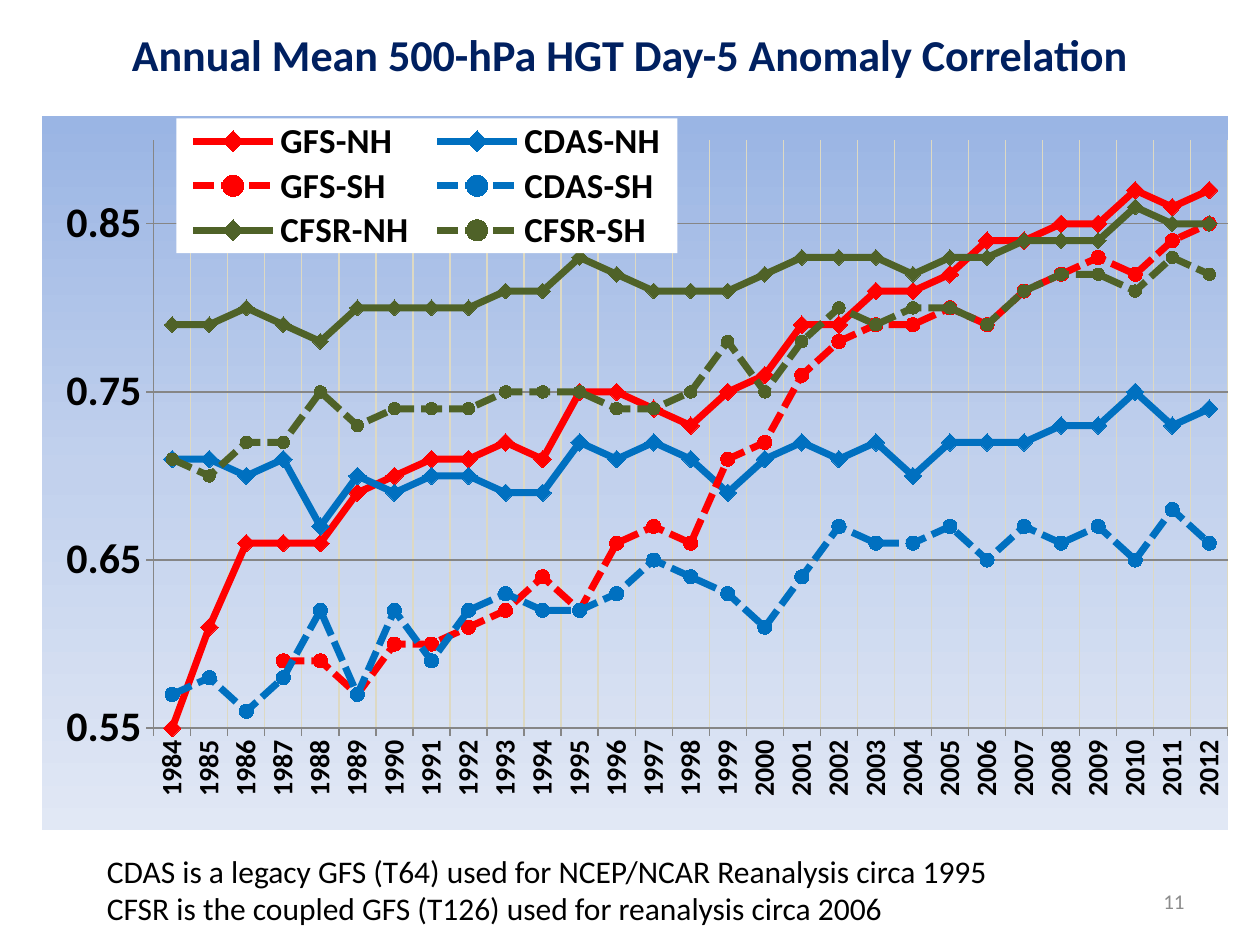
import pptx
import pptx.chart.data
import pptx.dml.color
import pptx.enum.chart
import pptx.enum.dml
import pptx.enum.text
import pptx.oxml
import pptx.oxml.ns
import pptx.util

Inches = pptx.util.Inches
Pt = pptx.util.Pt
qn = pptx.oxml.ns.qn
NAMESPACES = pptx.oxml.ns.nsdecls("c", "a")
ALIGN = pptx.enum.text.PP_ALIGN
ANCHOR = pptx.enum.text.MSO_ANCHOR
FONT = "Calibri"
COLORS = {
    "title": "002060", "text": "000000", "number": "8C8C8C", "white": "FFFFFF",
    "gfs": "FF0000", "cdas": "0070C0", "cfsr": "4F6228",
    "gfs_marker": "FFC000", "cdas_marker": "FAC090",
    "year_grid": "DDD9C3", "axis": "868686",
    "sky_top": "9AB5E4", "sky_middle": "C2D1ED", "sky_bottom": "E1E8F5",
}
YEARS = [str(year) for year in range(1984, 2013)]

# Name, colour, marker colour, marker size, correlations by year
SERIES = [
    ("GFS-NH", "gfs", "gfs_marker", 10,
     [0.55, 0.61, 0.66, 0.66, 0.66, 0.69, 0.7, 0.71, 0.71, 0.72, 0.71, 0.75, 0.75, 0.74, 0.73,
      0.75, 0.76, 0.79, 0.79, 0.81, 0.81, 0.82, 0.84, 0.84, 0.85, 0.85, 0.87, 0.86, 0.87]),
    ("CDAS-NH", "cdas", "cdas_marker", 10,
     [0.71, 0.71, 0.7, 0.71, 0.67, 0.7, 0.69, 0.7, 0.7, 0.69, 0.69, 0.72, 0.71, 0.72, 0.71,
      0.69, 0.71, 0.72, 0.71, 0.72, 0.7, 0.72, 0.72, 0.72, 0.73, 0.73, 0.75, 0.73, 0.74]),
    ("GFS-SH", "gfs", "gfs_marker", 8,
     [None, None, None, 0.59, 0.59, 0.57, 0.6, 0.6, 0.61, 0.62, 0.64, 0.62, 0.66, 0.67, 0.66,
      0.71, 0.72, 0.76, 0.78, 0.79, 0.79, 0.8, 0.79, 0.81, 0.82, 0.83, 0.82, 0.84, 0.85]),
    ("CDAS-SH", "cdas", "cdas_marker", 8,
     [0.57, 0.58, 0.56, 0.58, 0.62, 0.57, 0.62, 0.59, 0.62, 0.63, 0.62, 0.62, 0.63, 0.65, 0.64,
      0.63, 0.61, 0.64, 0.67, 0.66, 0.66, 0.67, 0.65, 0.67, 0.66, 0.67, 0.65, 0.68, 0.66]),
    ("CFSR-NH", "cfsr", "cfsr", 9,
     [0.79, 0.79, 0.8, 0.79, 0.78, 0.8, 0.8, 0.8, 0.8, 0.81, 0.81, 0.83, 0.82, 0.81, 0.81,
      0.81, 0.82, 0.83, 0.83, 0.83, 0.82, 0.83, 0.83, 0.84, 0.84, 0.84, 0.86, 0.85, 0.85]),
    ("CFSR-SH", "cfsr", "cfsr", 7,
     [0.71, 0.7, 0.72, 0.72, 0.75, 0.73, 0.74, 0.74, 0.74, 0.75, 0.75, 0.75, 0.74, 0.74, 0.75,
      0.78, 0.75, 0.78, 0.8, 0.79, 0.8, 0.8, 0.79, 0.81, 0.82, 0.82, 0.81, 0.83, 0.82]),
]


def rgb(name):
    return pptx.dml.color.RGBColor.from_string(COLORS[name])


def set_font(font, size, color="text", bold=False):
    font.name, font.size, font.bold = FONT, Pt(size), bold
    font.color.rgb = rgb(color)


def add_text(slide, box, lines, size=18, color="text", bold=False,
             align=ALIGN.LEFT, anchor=ANCHOR.TOP, wrap=True):
    shape = slide.shapes.add_textbox(*map(Inches, box))
    frame = shape.text_frame
    frame.word_wrap, frame.vertical_anchor = wrap, anchor
    for index, line in enumerate(lines):
        paragraph = frame.paragraphs[0] if index == 0 else frame.add_paragraph()
        paragraph.alignment = align
        run = paragraph.add_run()
        run.text = line
        set_font(run.font, size, color, bold)


def set_layout(part, index, box, chart_box, inner=False):
    """Place a chart part by a box in inches, measured from the chart's corner."""
    for layout in part.findall(qn("c:layout")):
        part.remove(layout)
    width, height = chart_box[2:]
    fractions = [length / side for length, side in zip(box, (width, height) * 2)]
    settings = [("layoutTarget", "inner")] if inner else []
    settings += [("xMode", "edge"), ("yMode", "edge"), *zip("xywh", fractions)]
    children = "".join(f'<c:{tag} val="{value}"/>' for tag, value in settings)
    part.insert(index, pptx.oxml.parse_xml(
        f"<c:layout {NAMESPACES}><c:manualLayout>{children}</c:manualLayout></c:layout>"))


def fill_chart_area(chart):
    stops = "".join(
        f'<a:gs pos="{position}"><a:srgbClr val="{COLORS[name]}"/></a:gs>'
        for position, name in [(0, "sky_top"), (50000, "sky_middle"), (100000, "sky_bottom")])
    properties = pptx.oxml.parse_xml(
        f'<c:spPr {NAMESPACES}><a:gradFill><a:gsLst>{stops}</a:gsLst>'
        '<a:lin ang="5400000" scaled="0"/></a:gradFill><a:ln><a:noFill/></a:ln></c:spPr>')
    chart.element.find(qn("c:chart")).addnext(properties)


def style_axis(axis, size, grid_color):
    axis.major_tick_mark = pptx.enum.chart.XL_TICK_MARK.OUTSIDE
    axis.minor_tick_mark = pptx.enum.chart.XL_TICK_MARK.NONE
    axis.format.line.color.rgb = rgb("axis")
    axis.has_major_gridlines = True
    grid = axis.major_gridlines.format.line
    grid.color.rgb, grid.width = rgb(grid_color), Pt(0.75)
    set_font(axis.tick_labels.font, size, bold=True)


def style_series(series, color, marker_color, marker_size):
    southern = series.name.endswith("SH")
    styles = pptx.enum.chart.XL_MARKER_STYLE
    series.smooth = False
    line = series.format.line
    line.color.rgb, line.width = rgb(color), Pt(4)
    if southern:
        line.dash_style = pptx.enum.dml.MSO_LINE.SQUARE_DOT
    marker = series.marker
    marker.style = styles.CIRCLE if southern else styles.DIAMOND
    marker.size = marker_size
    marker.format.fill.solid()
    marker.format.fill.fore_color.rgb = rgb(marker_color)
    marker.format.line.color.rgb = rgb(color)


def add_legend(chart, box, chart_box):
    chart.has_legend = True
    legend = chart.legend
    legend.position = pptx.enum.chart.XL_LEGEND_POSITION.RIGHT
    legend.include_in_layout = False
    set_font(legend.font, 20, bold=True)
    element = legend._element
    legend_position = element.find(qn("c:legendPos"))
    set_layout(element, element.index(legend_position) + 1, box, chart_box)
    element.find(qn("c:txPr")).addprevious(pptx.oxml.parse_xml(
        f'<c:spPr {NAMESPACES}><a:solidFill>'
        f'<a:srgbClr val="{COLORS["white"]}"/></a:solidFill></c:spPr>'))


def add_correlation_chart(slide, box):
    data = pptx.chart.data.CategoryChartData(number_format="0.00")
    data.categories = YEARS
    for name, *_, values in SERIES:
        data.add_series(name, values)
    chart = slide.shapes.add_chart(
        pptx.enum.chart.XL_CHART_TYPE.LINE_MARKERS, *map(Inches, box), data).chart
    chart.has_title = False
    set_font(chart.font, 18)
    fill_chart_area(chart)

    # Plot area and series
    plot_area = chart.element.find(qn("c:chart")).find(qn("c:plotArea"))
    set_layout(plot_area, 0, (0.92, 0.19, 8.53, 4.67), box, inner=True)
    chart.plots[0].vary_by_categories = False
    for series, (_, color, marker_color, size, _) in zip(chart.plots[0].series, SERIES):
        style_series(series, color, marker_color, size)

    # Axes
    style_axis(chart.category_axis, 16, "year_grid")
    labels = chart.category_axis._element.find(qn("c:txPr"))
    labels.find(qn("a:bodyPr")).set("rot", "-5400000")
    value_axis = chart.value_axis
    style_axis(value_axis, 24, "axis")
    value_axis.minimum_scale, value_axis.maximum_scale = 0.55, 0.9
    value_axis.major_unit = 0.1
    value_axis.tick_labels.number_format = "0.00"
    value_axis.tick_labels.number_format_is_linked = False

    # Two-column legend at the top left
    add_legend(chart, (1.07, 0.02, 3.98, 1.07), box)


def build_slide(presentation):
    slide = presentation.slides.add_slide(presentation.slide_layouts[6])
    # Title
    add_text(slide, (0.5, 0.08, 9, 0.7), ["Annual Mean 500-hPa HGT Day-5 Anomaly Correlation"],
             size=25.2, color="title", bold=True, align=ALIGN.CENTER, anchor=ANCHOR.MIDDLE)
    add_correlation_chart(slide, (0.33, 0.92, 9.42, 5.67))
    # Explanation and slide number
    add_text(slide, (0.75, 6.71, 7.21, 0.71),
             ["CDAS is a legacy GFS (T64) used for NCEP/NCAR Reanalysis circa 1995",
              "CFSR is the coupled GFS (T126) used for reanalysis circa 2006"], wrap=False)
    add_text(slide, (7.17, 6.95, 2.33, 0.4), ["11"], size=12, color="number",
             align=ALIGN.RIGHT, anchor=ANCHOR.MIDDLE)


def main():
    presentation = pptx.Presentation()
    presentation.slide_width, presentation.slide_height = Inches(10), Inches(7.5)
    build_slide(presentation)
    presentation.save("out.pptx")


if __name__ == "__main__":
    main()
